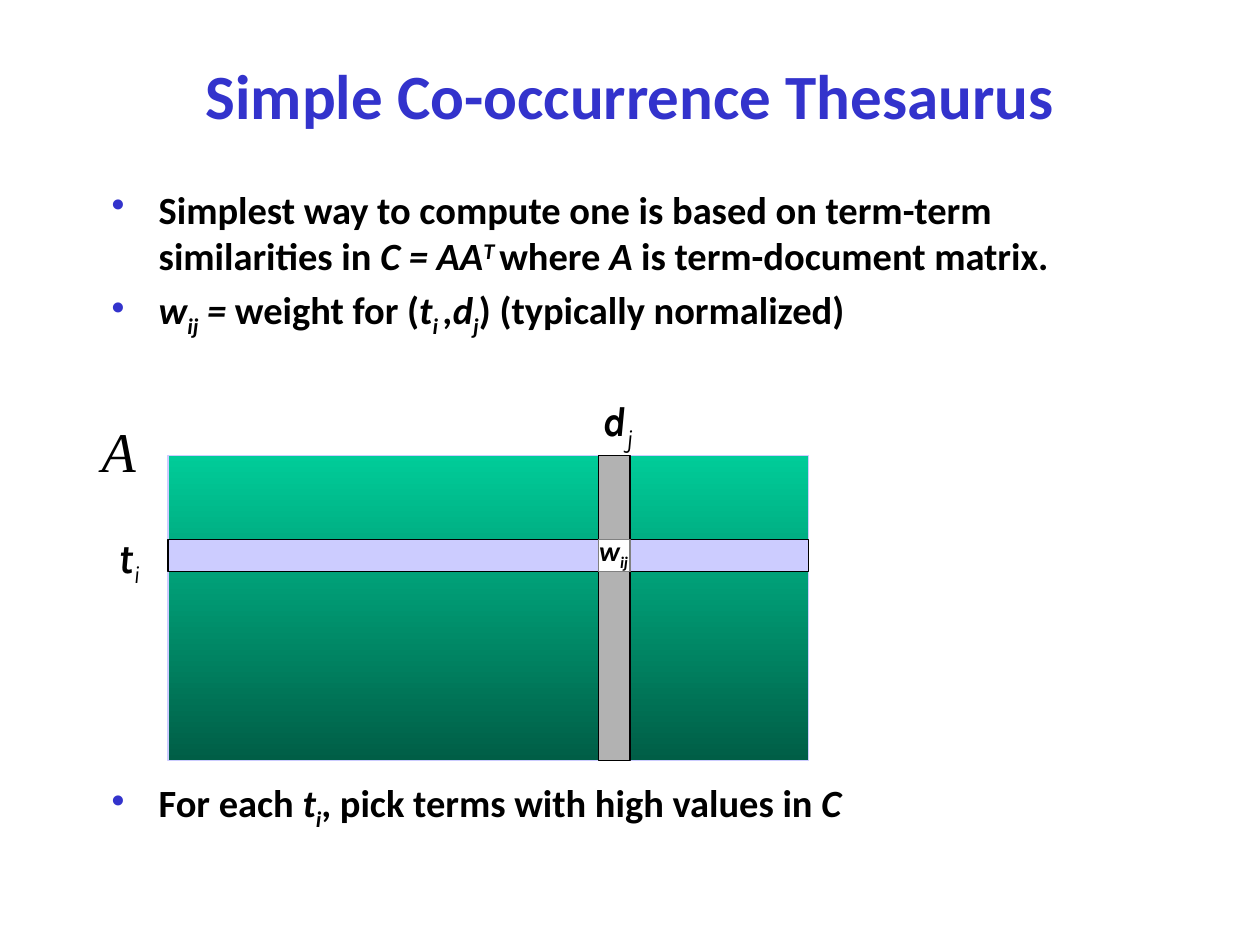
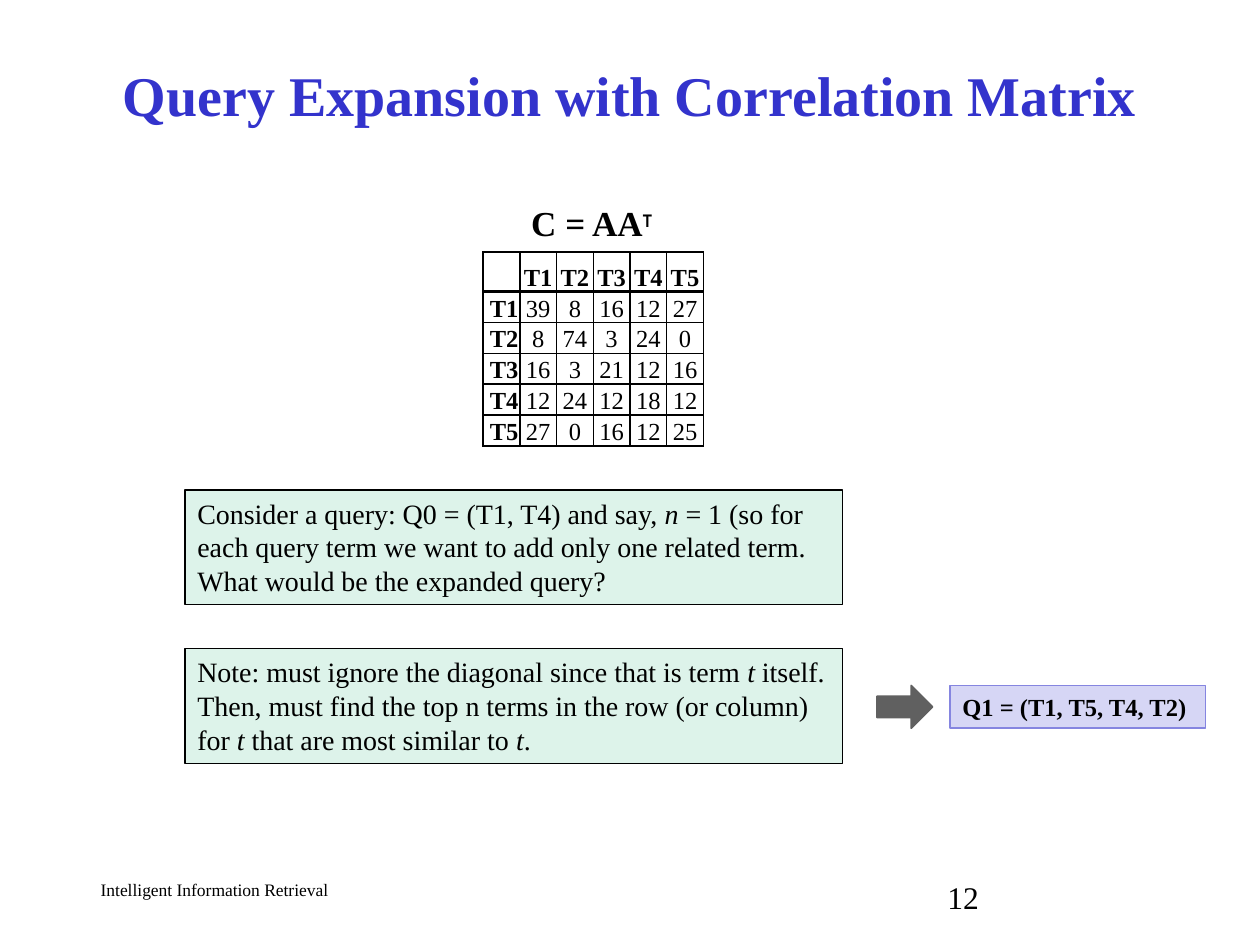
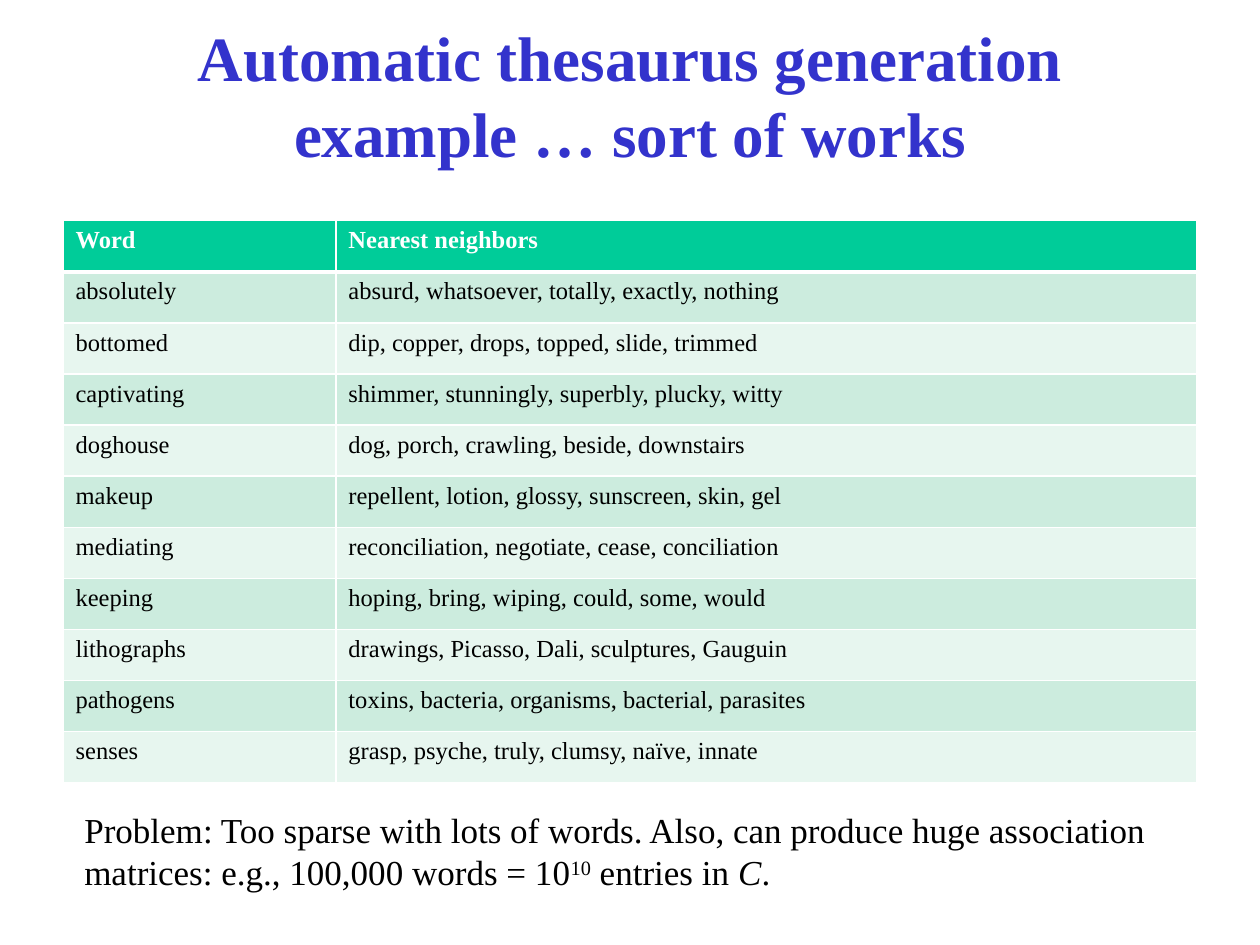
from dataclasses import dataclass
from typing import NamedTuple, Optional

from lxml import etree
from pptx import Presentation
from pptx import util as u
from pptx.dml.color import RGBColor
from pptx.enum import shapes, text
from pptx.oxml import ns

BLUE, BLACK, WHITE = "3333CC", "000000", "FFFFFF"
GREEN, DARK_GREEN, LAVENDER = "00CC99", "005E46", "CCCCFF"
GREY, MID_GREY, DARK_GREY = "B2B2B2", "808080", "606060"
NOTE_FILL, ANSWER_FILL, ANSWER_LINE = "DDF3EA", "D6D6F5", "8585E0"
BANDS = ("CCECDE", "E7F6EF")
SERIF, SANS, LABEL = "Times New Roman", "Calibri", "Karla"
LEFT, CENTER, RIGHT = text.PP_ALIGN.LEFT, text.PP_ALIGN.CENTER, text.PP_ALIGN.RIGHT
TOP, MIDDLE, BOTTOM = text.MSO_ANCHOR.TOP, text.MSO_ANCHOR.MIDDLE, text.MSO_ANCHOR.BOTTOM
RECT, ARROW = shapes.MSO_SHAPE.RECTANGLE, shapes.MSO_SHAPE.RIGHT_ARROW
SUB, SUP = -25, 30


class Box(NamedTuple):
    """Left, top, width and height in centimetres."""
    x: float
    y: float
    w: float
    h: float

    def lengths(self) -> list:
        return [u.Cm(v) for v in self]


class Run(NamedTuple):
    text: str
    italic: Optional[bool] = None
    base: int = 0
    bold: Optional[bool] = None
    font: Optional[str] = None
    size: Optional[float] = None


@dataclass(frozen=True)
class Style:
    size: float
    font: str = SERIF
    color: str = BLACK
    bold: bool = False
    align: text.PP_ALIGN = LEFT
    bullet: bool = False


@dataclass(frozen=True)
class Block:
    """A filled shape with an optional paragraph."""
    box: Box
    fill: str
    line: str = BLACK
    runs: tuple = ()
    style: Style = Style(16)
    kind: shapes.MSO_SHAPE = RECT
    width: float = 0.75
    fill_to: str = ""
    wrap: bool = True


@dataclass(frozen=True)
class Label:
    box: Box
    runs: tuple
    style: Style
    wrap: bool = True


def rgb(value: str) -> RGBColor:
    return RGBColor.from_string(value)


def it(content: str, **options) -> Run:
    return Run(content, italic=True, **options)


def add_bullet(p) -> None:
    pPr = p._p.get_or_add_pPr()
    pPr.set("marL", str(u.Cm(0.95)))
    pPr.set("indent", str(-u.Cm(0.95)))
    color = etree.Element(ns.qn("a:buClr"))
    etree.SubElement(color, ns.qn("a:srgbClr"), val=BLUE)
    char = etree.Element(ns.qn("a:buChar"), char="•")
    at = 1 if pPr.find(ns.qn("a:spcBef")) is not None else 0
    pPr.insert(at, color)
    pPr.insert(at + 1, char)


def write(p, runs: tuple, style: Style) -> None:
    p.alignment = style.align
    p.font.size, p.font.name = u.Pt(style.size), style.font
    p.font.bold, p.font.color.rgb = style.bold, rgb(style.color)
    if style.bullet:
        p.space_before = u.Pt(style.size * 0.2)
        add_bullet(p)
    for run in runs:
        r = p.add_run()
        r.text = run.text
        r.font.italic, r.font.bold, r.font.name = run.italic, run.bold, run.font
        if run.size:
            r.font.size = u.Pt(run.size)
        if run.base:
            r.font._element.set("baseline", str(run.base * 1000))


def add_text(s, box: Box, paragraphs: list, style: Style,
             anchor: text.MSO_ANCHOR = TOP, wrap: bool = True) -> None:
    tf = s.shapes.add_textbox(*box.lengths()).text_frame
    tf.word_wrap, tf.vertical_anchor = wrap, anchor
    for i, runs in enumerate(paragraphs):
        write(tf.add_paragraph() if i else tf.paragraphs[0], runs, style)


def add_label(s, label: Label) -> None:
    add_text(s, label.box, [label.runs], label.style, wrap=label.wrap)


def add_title(s, title: str, size: float, font: str = SERIF) -> None:
    add_text(s, Box(1.9, 0.85, 21.6, 2.1), [(Run(title),)],
             Style(size, font, BLUE, True, CENTER), MIDDLE)


def add_block(s, block: Block) -> None:
    sp = s.shapes.add_shape(block.kind, *block.box.lengths())
    sp.shadow.inherit = False
    if block.fill_to:
        sp.fill.gradient()
        sp.fill.gradient_angle = 270
        for stop, color in zip(sp.fill.gradient_stops, (block.fill, block.fill_to)):
            stop.color.rgb = rgb(color)
    else:
        sp.fill.solid()
        sp.fill.fore_color.rgb = rgb(block.fill)
    sp.line.color.rgb, sp.line.width = rgb(block.line), u.Pt(block.width)
    if block.runs:
        tf = sp.text_frame
        tf.word_wrap, tf.vertical_anchor = block.wrap, TOP
        write(tf.paragraphs[0], block.runs, block.style)


def set_borders(cell, color: str, **widths: float) -> None:
    """Draw all four borders 1 pt wide, except for the sides given (L, R, T, B)."""
    tcPr = cell._tc.get_or_add_tcPr()
    for i, side in enumerate("LRTB"):
        ln = etree.Element(ns.qn(f"a:ln{side}"), w=str(u.Pt(widths.get(side, 1))))
        fill = etree.SubElement(ln, ns.qn("a:solidFill"))
        etree.SubElement(fill, ns.qn("a:srgbClr"), val=color)
        tcPr.insert(i, ln)


def add_grid(s, x: float, y: float, widths: list, heights: list):
    tbl = s.shapes.add_table(len(heights), len(widths), u.Cm(x), u.Cm(y),
                             u.Cm(sum(widths)), u.Cm(sum(heights))).table
    tbl.first_row = tbl.horz_banding = False
    for col, width in zip(tbl.columns, widths):
        col.width = u.Cm(width)
    for row, height in zip(tbl.rows, heights):
        row.height = u.Cm(height)
    return tbl


def add_correlation_matrix(s) -> None:
    terms = ["T1", "T2", "T3", "T4", "T5"]
    values = [[39, 8, 16, 12, 27], [8, 74, 3, 24, 0], [16, 3, 21, 12, 16],
              [12, 24, 12, 18, 12], [27, 0, 16, 12, 25]]
    rows = [["", *terms]] + [[t, *v] for t, v in zip(terms, values)]
    tbl = add_grid(s, 9.74, 5.08, [0.74] * 6, [0.64] + [0.57] * 5)
    for i, row in enumerate(rows):
        for j, value in enumerate(row):
            cell = tbl.cell(i, j)
            cell.fill.background()
            cell.vertical_anchor = BOTTOM
            cell.margin_left = cell.margin_right = cell.margin_top = u.Cm(0.03)
            cell.margin_bottom = 0
            align = RIGHT if i and not j else CENTER
            write(cell.text_frame.paragraphs[0], (Run(str(value)),),
                  Style(14, bold=not (i and j), align=align))
            set_borders(cell, BLACK, **({"B": 2} if i == 0 else {"T": 2} if i == 1 else {}))


def add_neighbor_table(s) -> None:
    rows = [
        ("Word", "Nearest neighbors"),
        ("absolutely", "absurd, whatsoever, totally, exactly, nothing"),
        ("bottomed", "dip, copper, drops, topped, slide, trimmed"),
        ("captivating", "shimmer, stunningly, superbly, plucky, witty"),
        ("doghouse", "dog, porch, crawling, beside, downstairs"),
        ("makeup", "repellent, lotion, glossy, sunscreen, skin, gel"),
        ("mediating", "reconciliation, negotiate, cease, conciliation"),
        ("keeping", "hoping, bring, wiping, could, some, would"),
        ("lithographs", "drawings, Picasso, Dali, sculptures, Gauguin"),
        ("pathogens", "toxins, bacteria, organisms, bacterial, parasites"),
        ("senses", "grasp, psyche, truly, clumsy, naïve, innate"),
    ]
    tbl = add_grid(s, 1.27, 4.45, [5.5, 17.36], [1.03] * len(rows))
    for i, row in enumerate(rows):
        for j, value in enumerate(row):
            cell = tbl.cell(i, j)
            cell.fill.solid()
            cell.fill.fore_color.rgb = rgb(BANDS[(i - 1) % 2] if i else GREEN)
            style = Style(14) if i else Style(14, color=WHITE, bold=True)
            write(cell.text_frame.paragraphs[0], (Run(value),), style)
            set_borders(cell, WHITE, **({"B": 3} if i == 0 else {"T": 3} if i == 1 else {}))


def build_cooccurrence(s) -> None:
    add_title(s, "Simple Co-occurrence Thesaurus", 36, SANS)
    body = Style(22, SANS, bold=True, bullet=True)
    add_text(s, Box(2, 3.63, 21.6, 3.6), [
        (Run("Simplest way to compute one is based on term-term similarities in "),
         it("C = AA"), it("T ", base=SUP), Run("where "), it("A"),
         Run(" is term-document matrix.")),
        (it("w"), it("ij", base=SUB), it(" = "), Run("weight for ("), it("t"),
         it("i ", base=SUB), it(",d"), it("j", base=SUB), Run(") (typically normalized)")),
    ], body)
    add_text(s, Box(2, 15.58, 21.6, 1.3), [
        (Run("For each "), it("t"), it("i", base=SUB),
         Run(", pick terms with high values in "), it("C")),
    ], body)

    matrix = Box(3.39, 9.19, 12.91, 6.14)
    row_y, col_x, band = 10.88, 12.06, 0.64
    for block in (
        Block(matrix, GREEN, LAVENDER, fill_to=DARK_GREEN),
        Block(Box(matrix.x, row_y, matrix.w, band), LAVENDER),
        Block(Box(col_x, matrix.y, band, matrix.h), GREY),
        Block(Box(col_x, row_y, band, band), WHITE, MID_GREY),
    ):
        add_block(s, block)

    axis = Style(24, LABEL, bold=True, align=RIGHT)
    for label in (
        Label(Box(1.17, 10.58, 1.9, 1.28), (it("t"), it("i", base=SUB, bold=False)), axis),
        Label(Box(11.11, 7.83, 1.9, 1.28), (it("d"), it("j", base=SUB, bold=False)), axis),
        Label(Box(1.8, 8.28, 1.27, 1.62), (it("A"),), Style(32), False),
        Label(Box(11.83, 10.64, 1.12, 0.94), (it("w"), it("ij", base=SUB)),
              Style(16, SANS, bold=True), False),
    ):
        add_label(s, label)


def build_query_expansion(s) -> None:
    add_title(s, "Query Expansion with Correlation Matrix", 32)
    add_label(s, Label(Box(10.46, 3.94, 3, 1.1),
                       (Run("C = AA"), Run("T", base=SUP, font="Arial Narrow", size=18)),
                       Style(20, bold=True), False))
    add_correlation_matrix(s)
    for block in (
        Block(Box(3.73, 9.88, 13.26, 2.31), NOTE_FILL, runs=(
            Run("Consider a query: Q0 = (T1, T4) and say, "), it("n"),
            Run(" = 1 (so for each query term we want to add only one related term. "
                "What would be the expanded query?"))),
        Block(Box(3.73, 13.08, 13.26, 2.31), NOTE_FILL, runs=(
            Run("Note: must ignore the diagonal since that is term "), it("t"),
            Run(" itself. Then, must find the top n terms in the row (or column) for "),
            it("t"), Run(" that are most similar to "), it("t"), Run("."))),
        Block(Box(19.15, 13.82, 5.16, 0.86), ANSWER_FILL, ANSWER_LINE,
              (Run("Q1 = (T1, T5, T4, T2)"),), Style(14, bold=True), wrap=False),
        Block(Box(17.68, 13.82, 1.12, 0.86), DARK_GREY, DARK_GREY, kind=ARROW, width=1),
    ):
        add_block(s, block)
    add_label(s, Label(Box(1.78, 17.6, 9.53, 0.64),
                       (Run("Intelligent Information Retrieval"),), Style(10)))
    add_label(s, Label(Box(18.85, 17.58, 5.28, 0.64), (Run("12"),), Style(18)))


def build_neighbors(s) -> None:
    add_title(s, "Automatic thesaurus generation example … sort of works", 36)
    add_neighbor_table(s)
    add_label(s, Label(Box(1.45, 16.18, 22.2, 1.96), (
        Run("Problem: Too sparse with lots of words. Also, can produce huge association "
            "matrices: e.g., 100,000 words = 10"),
        Run("10", base=SUP), Run(" entries in "), it("C"), Run(".")), Style(20)))


def main() -> None:
    prs = Presentation()
    prs.slide_width, prs.slide_height = u.Cm(25.4), u.Cm(19.05)
    for build in (build_cooccurrence, build_query_expansion, build_neighbors):
        build(prs.slides.add_slide(prs.slide_layouts[6]))
    prs.save("out.pptx")


if __name__ == "__main__":
    main()
